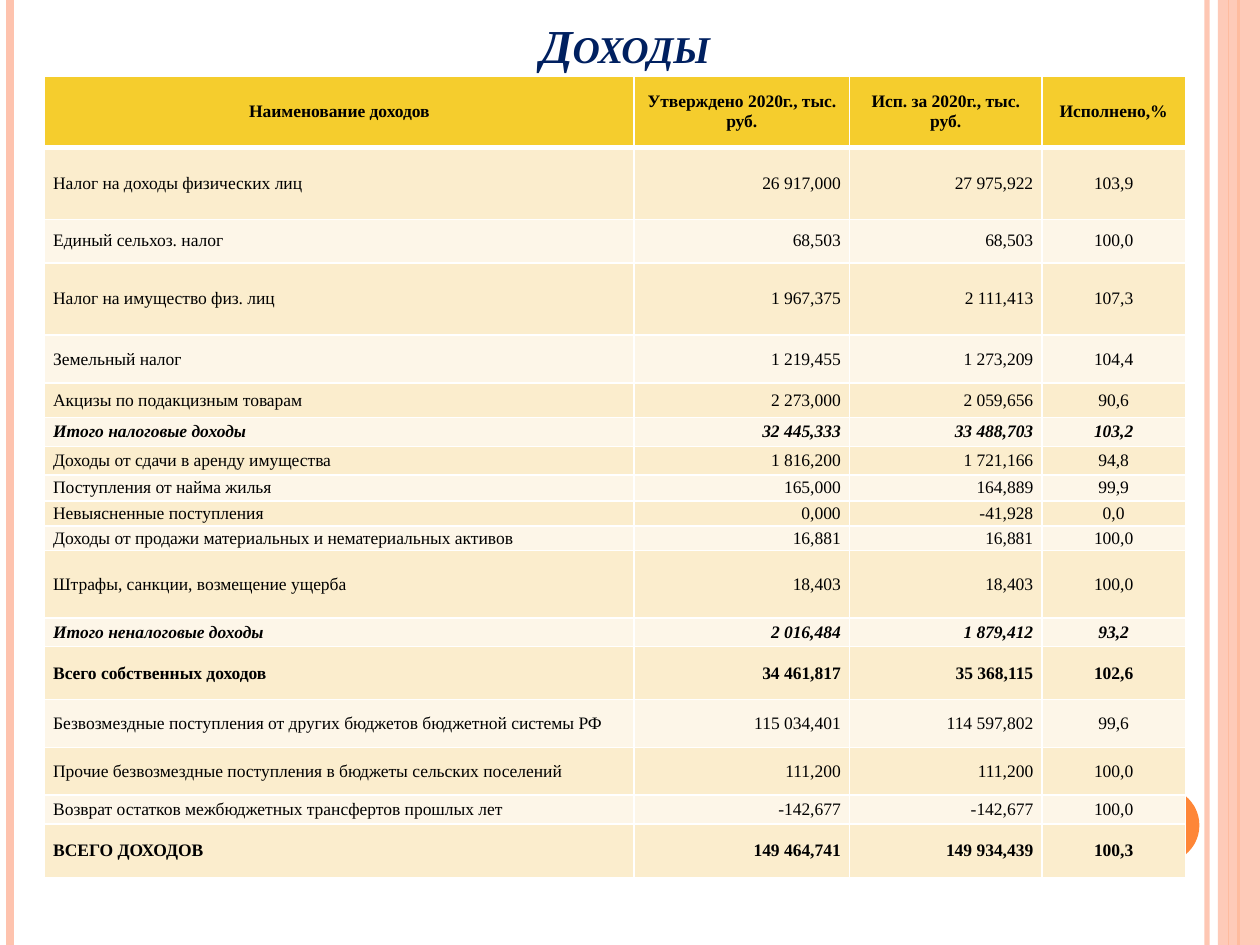
from pptx import Presentation
from pptx.dml.color import RGBColor
from pptx.enum.shapes import MSO_CONNECTOR, MSO_SHAPE
from pptx.enum.text import MSO_ANCHOR, PP_ALIGN
from pptx.oxml.ns import qn
from pptx.util import Pt
from lxml.etree import SubElement

THEME = dict(
    font="Times New Roman", head=27, body=10,
    navy="002060", black="000000", white="FFFFFF",
    pink="FEC3AE", orange="FE8637",
    gold="F5CD2D", sand="FBEDCD", cream="FDF6E8",
)
LEFT, MID, RIGHT = PP_ALIGN.LEFT, PP_ALIGN.CENTER, PP_ALIGN.RIGHT


def write(frame, text, size=THEME["body"], color=THEME["black"],
          bold=False, italic=False, caps=False, align=LEFT):
    para = frame.paragraphs[0]
    para.alignment = align
    run = para.add_run()
    run.text = text
    font = run.font
    font.name, font.size = THEME["font"], Pt(size)
    font.bold, font.italic = bold, italic
    font.color.rgb = RGBColor.from_string(color)
    if caps:
        run._r.get_or_add_rPr().set("cap", "small")


def fade(shape, share):
    """Set the opacity, in percent, of every colour in the shape."""
    for tone in shape.element.spPr.iter(qn("a:srgbClr")):
        SubElement(tone, qn("a:alpha"), val=str(share * 1000))


deck = Presentation()
deck.slide_width, deck.slide_height = Pt(720), Pt(540)
slide = deck.slides.add_slide(deck.slide_layouts[5])
shapes = slide.shapes

# Side stripes: x, colour, width, opacity
stripes = [
    (689.8, "pink", 3, 93),
    (5.8, "pink", 4.5, 100),
    (707.8, "orange", 1.5, 100),
    (702, "orange", 0.75, 100),
]
for x, color, width, share in stripes:
    stripe = shapes.add_connector(MSO_CONNECTOR.STRAIGHT, Pt(x), 0, Pt(x), Pt(540))
    stripe.line.color.rgb = RGBColor.from_string(THEME[color])
    stripe.line.width = Pt(width)
    SubElement(stripe.element.spPr, qn("a:effectLst"))
    if share < 100:
        fade(stripe, share)

# Side band and dot: preset, place, colour, opacity
marks = [
    (MSO_SHAPE.RECTANGLE, (696, 0, 24, 540), "pink", 87),
    (MSO_SHAPE.OVAL, (642.2, 450, 43.2, 43.2), "orange", 100),
]
for kind, box, color, share in marks:
    mark = shapes.add_shape(kind, *map(Pt, box))
    mark.shadow.inherit = False
    mark.line.fill.background()
    mark.fill.solid()
    mark.fill.fore_color.rgb = RGBColor.from_string(THEME[color])
    if share < 100:
        fade(mark, share)

title = shapes.title
title.left, title.top, title.width, title.height = map(Pt, (36, 11.5, 648, 33.8))
title.text_frame.vertical_anchor = MSO_ANCHOR.BOTTOM
write(title.text_frame, "Доходы ", size=THEME["head"], color=THEME["navy"],
      bold=True, italic=True, caps=True, align=MID)

# Row height, style (b bold, i italic), cells
rows = [
    (41, "b", "Наименование доходов", "Утверждено 2020г., тыс. руб.",
     "Исп. за 2020г., тыс. руб.", "Исполнено,%"),
    (41, "", "Налог на доходы физических лиц", "26 917,000", "27 975,922", "103,9"),
    (25, "", "Единый сельхоз. налог", "68,503", "68,503", "100,0"),
    (41.3, "", "Налог на имущество физ. лиц", "1 967,375", "2 111,413", "107,3"),
    (27.4, "", "Земельный налог", "1 219,455", "1 273,209", "104,4"),
    (19.8, "", "Акцизы по подакцизным товарам", "2 273,000", "2 059,656", "90,6"),
    (16.3, "bi", "Итого налоговые доходы", "32 445,333", "33 488,703", "103,2"),
    (16.3, "", "Доходы от сдачи в аренду имущества", "1 816,200", "1 721,166", "94,8"),
    (15, "", "Поступления от найма жилья", "165,000", "164,889", "99,9"),
    (14.2, "", "Невыясненные поступления", "0,000", "-41,928", "0,0"),
    (14.2, "", "Доходы от продажи материальных и нематериальных активов",
     "16,881", "16,881", "100,0"),
    (38.6, "", "Штрафы, санкции, возмещение ущерба", "18,403", "18,403", "100,0"),
    (16.3, "bi", "Итого неналоговые доходы", "2 016,484", "1 879,412", "93,2"),
    (30.3, "b", "Всего собственных доходов", "34 461,817", "35 368,115", "102,6"),
    (27.4, "", "Безвозмездные поступления от других бюджетов бюджетной системы РФ",
     "115 034,401", "114 597,802", "99,6"),
    (27.2, "", "Прочие безвозмездные поступления в бюджеты сельских поселений",
     "111,200", "111,200", "100,0"),
    (16.5, "", "Возврат остатков межбюджетных трансфертов прошлых лет",
     "-142,677", "-142,677", "100,0"),
    (30.8, "b", "ВСЕГО ДОХОДОВ", "149 464,741", "149 934,439", "100,3"),
]
widths = [337, 123, 110, 82]
aligns = [LEFT, RIGHT, RIGHT, MID]

heights = [row[0] for row in rows]
table = shapes.add_table(len(rows), len(widths), Pt(25.4), Pt(43.3),
                         Pt(sum(widths)), Pt(sum(heights))).table
for column, width in zip(table.columns, widths):
    column.width = Pt(width)

for r, (height, style, *texts) in enumerate(rows):
    table.rows[r].height = Pt(height)
    fill = "gold" if r == 0 else ("cream", "sand")[r % 2]
    for c, text in enumerate(texts):
        cell = table.cell(r, c)
        cell.margin_left = cell.margin_right = Pt(5)
        cell.margin_top = cell.margin_bottom = 0
        cell.vertical_anchor = MSO_ANCHOR.MIDDLE
        props = cell._tc.get_or_add_tcPr()
        for side in "LRTB":
            thick = (r, side) in ((0, "B"), (1, "T"))
            edge = SubElement(props, qn(f"a:ln{side}"), w=str(Pt(3 if thick else 1)))
            paint = SubElement(edge, qn("a:solidFill"))
            SubElement(paint, qn("a:srgbClr"), val=THEME["white"])
        cell.fill.solid()
        cell.fill.fore_color.rgb = RGBColor.from_string(THEME[fill])
        write(cell.text_frame, text, bold="b" in style, italic="i" in style,
              align=aligns[c] if r else MID)

deck.save("out.pptx")
